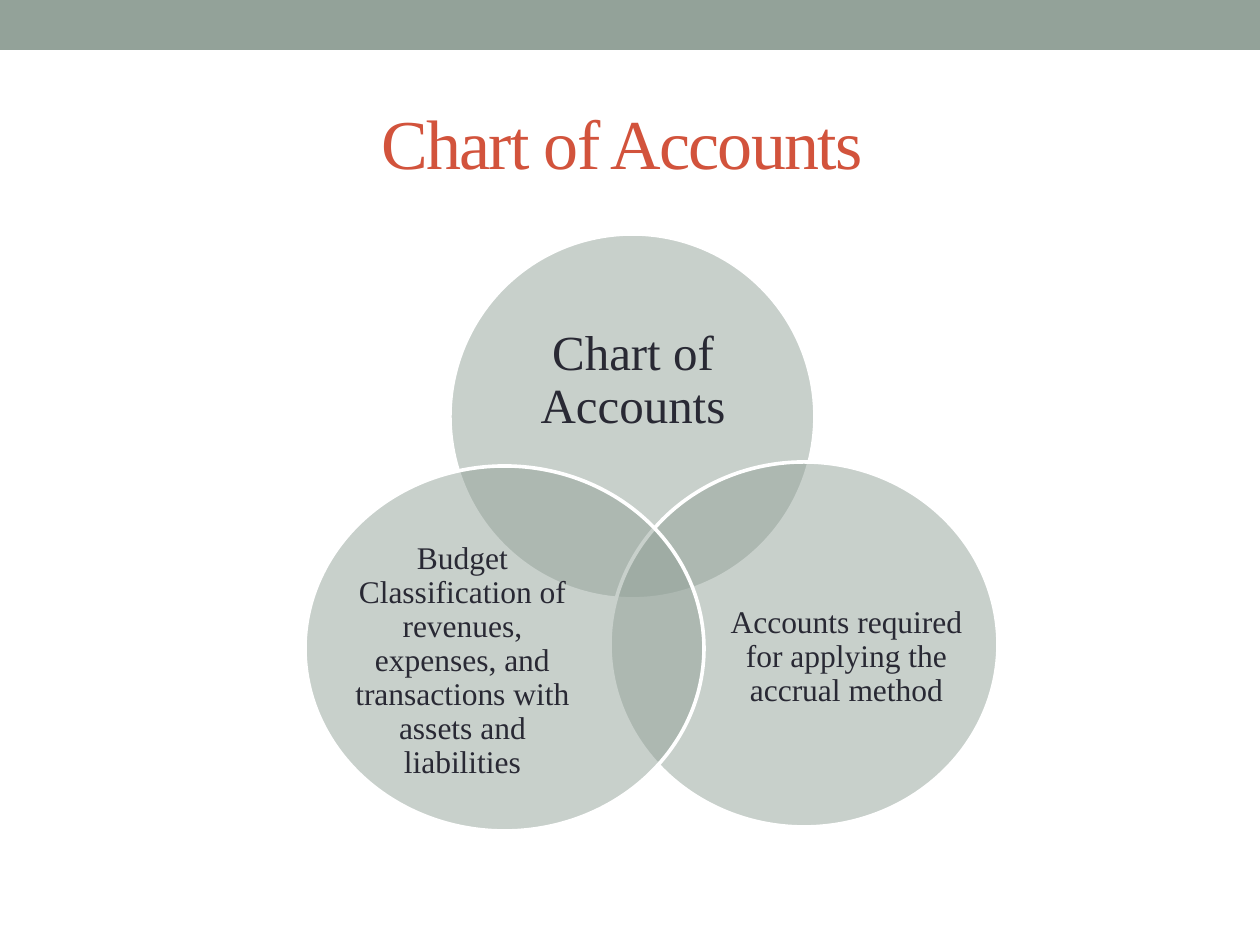
from lxml import etree
from pptx import Presentation
from pptx.dml.color import RGBColor
from pptx.enum.shapes import MSO_SHAPE
from pptx.enum.text import MSO_ANCHOR, PP_ALIGN
from pptx.oxml.ns import qn
from pptx.util import Pt

RECT, OVAL = MSO_SHAPE.RECTANGLE, MSO_SHAPE.OVAL
MIDDLE, CENTER = MSO_ANCHOR.MIDDLE, PP_ALIGN.CENTER
SCALE = 914400 / 126
FONT = "Times New Roman"
SAGE, RED, INK, WHITE = "93A299", "D2533C", "292934", "FFFFFF"
SETS = [
    ("Chart of Accounts", 28, (450, 234, 365, 365), (499, 299, 268, 164)),
    ("Accounts required for applying the accrual method", 18,
     (610, 462, 388, 365), (730, 557, 233, 200)),
    ("Budget Classification of revenues, expenses, and transactions with "
     "assets and liabilities", 18, (305, 466, 399, 365), (343, 561, 239, 200)),
]


def px(n):
    return round(n * SCALE)


def paint(color, code):
    color.rgb = RGBColor.from_string(code)


def write(frame, text, size, code):
    frame.word_wrap = True
    frame.vertical_anchor = MIDDLE
    para = frame.paragraphs[0]
    para.text = text
    para.alignment = CENTER
    para.font.name = FONT
    para.font.size = Pt(size)
    paint(para.font.color, code)
    return para


def add_title(slide, text):
    title = slide.shapes.title
    title.left, title.top, title.width, title.height = map(px, (63, 73, 1134, 136))
    para = write(title.text_frame, text, 40, RED)
    para.runs[0].font._element.set("spc", "-100")


def add_solid(slide, kind, box):
    shape = slide.shapes.add_shape(kind, *map(px, box))
    shape.shadow.inherit = False
    shape.fill.solid()
    paint(shape.fill.fore_color, SAGE)
    shape.line.fill.background()
    return shape


def add_circle(slide, box):
    shape = add_solid(slide, OVAL, box)
    color = shape._element.spPr.find(qn("a:solidFill"))[0]
    etree.SubElement(color, qn("a:alpha"), val="50000")
    paint(shape.line.color, WHITE)
    shape.line.width = Pt(2.08)


def add_label(slide, text, size, box):
    frame = slide.shapes.add_textbox(*map(px, box)).text_frame
    frame.margin_left = frame.margin_right = 0
    frame.margin_top = frame.margin_bottom = 0
    para = write(frame, text, size, INK)
    para.line_spacing = 0.9


def main():
    deck = Presentation()
    deck.slide_width, deck.slide_height = px(1260), px(945)
    slide = deck.slides.add_slide(deck.slide_layouts[5])
    add_solid(slide, RECT, (0, 0, 1260, 50))
    add_title(slide, "Chart of Accounts ")
    for text, size, circle, label in SETS:
        add_circle(slide, circle)
        add_label(slide, text, size, label)
    deck.save("out.pptx")


if __name__ == "__main__":
    main()
